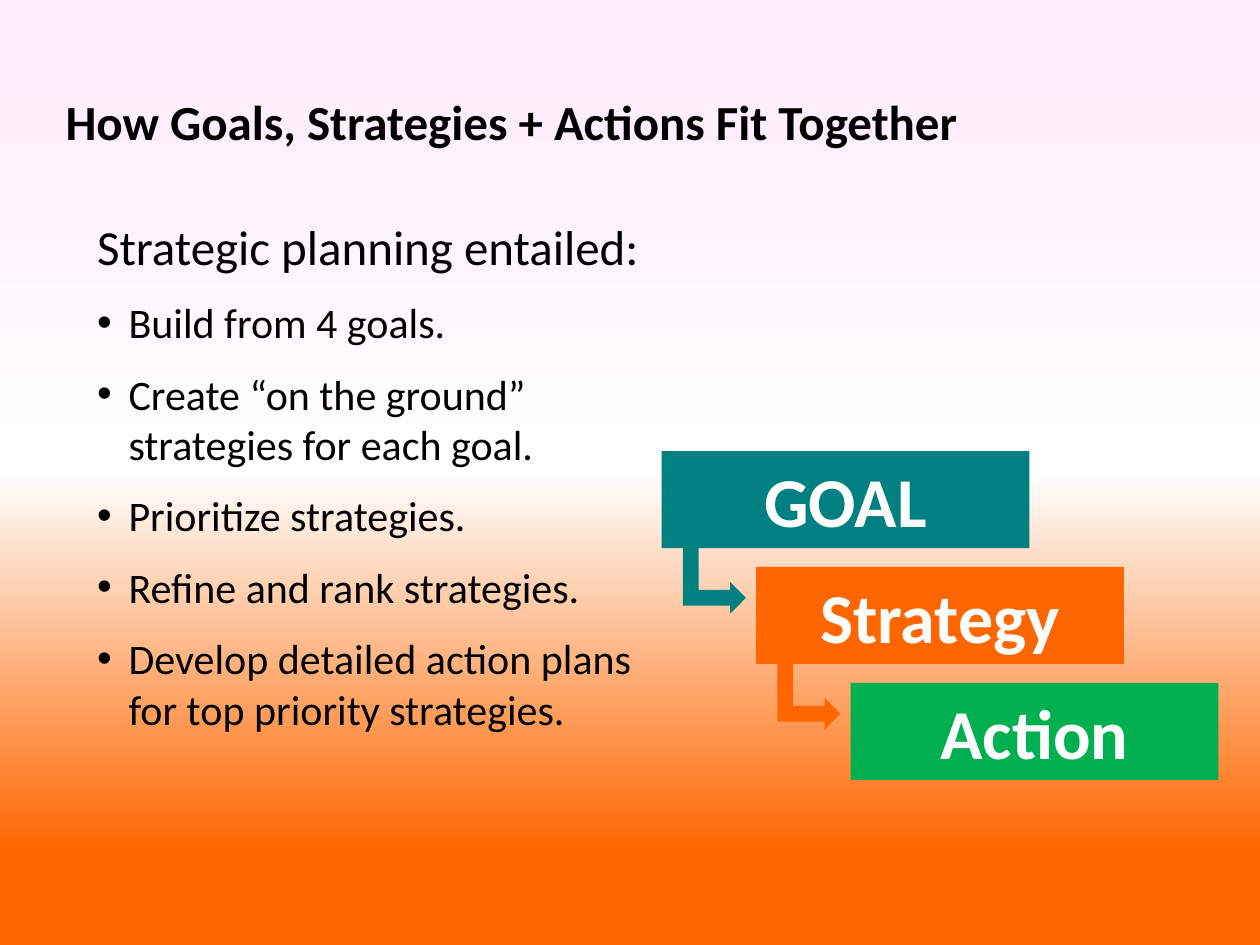
from lxml import etree
from pptx import Presentation
from pptx.dml.color import RGBColor
from pptx.enum.shapes import MSO_SHAPE
from pptx.enum.text import MSO_ANCHOR, MSO_AUTO_SIZE, PP_ALIGN
from pptx.oxml.ns import qn
from pptx.util import Inches, Pt

# Content
TITLE = "How Goals, Strategies + Actions Fit Together"
LEAD = "Strategic planning entailed:"
BULLETS = [
    "Build from 4 goals.",
    "Create “on the ground” strategies for each goal.",
    "Prioritize strategies.",
    "Refine and rank strategies.",
    "Develop detailed action plans for top priority strategies.",
]
STEPS = [("GOAL", "teal"), ("Strategy", "orange"), ("Action", "green")]

FONT = "Calibri"
COLORS = {
    "teal": "008080",
    "orange": "FF6600",
    "green": "00B050",
    "white": "FFFFFF",
    "pink": "FFEBFA",
    "black": "000000",
}
BACKGROUND_STOPS = [(10, "orange"), (50, "white"), (100, "pink")]

# Staircase geometry, in inches
STEP_LEFT, STEP_TOP = 5.25, 3.58
STEP_WIDTH, STEP_HEIGHT = 2.92, 0.77
STEP_RIGHT, STEP_DOWN = 0.75, 0.92
ARROW_WIDTH, ARROW_HEIGHT = 0.54, 0.5
ARROW_INDENT = 0.15


def color(name):
    return RGBColor.from_string(COLORS[name])


def add_text(paragraph, text, size, color_name="black", bold=False):
    run = paragraph.add_run()
    run.text = text
    run.font.name = FONT
    run.font.size = Pt(size)
    run.font.bold = bold
    run.font.color.rgb = color(color_name)


def place(shape, left, top, width, height):
    shape.left, shape.top = Inches(left), Inches(top)
    shape.width, shape.height = Inches(width), Inches(height)
    frame = shape.text_frame
    frame.word_wrap = True
    frame.auto_size = MSO_AUTO_SIZE.NONE
    frame.vertical_anchor = MSO_ANCHOR.TOP
    return frame


def set_bullet(paragraph, character=None):
    properties = paragraph._p.get_or_add_pPr()
    properties.set("marL", str(Inches(0.25)))
    properties.set("indent", str(Inches(-0.25)))
    if character:
        etree.SubElement(properties, qn("a:buFont")).set("typeface", "Arial")
        etree.SubElement(properties, qn("a:buChar")).set("char", character)
    else:
        etree.SubElement(properties, qn("a:buNone"))


def set_background(slide):
    fill = slide.background.fill
    fill.gradient()
    fill.gradient_angle = 90  # counter-clockwise: runs from bottom to top
    stops = slide.background._cSld.find(".//" + qn("a:gsLst"))
    for stop in list(stops):
        stops.remove(stop)
    for position, name in BACKGROUND_STOPS:
        stop = etree.SubElement(stops, qn("a:gs"))
        stop.set("pos", str(position * 1000))
        etree.SubElement(stop, qn("a:srgbClr")).set("val", COLORS[name])


def add_filled_shape(group, kind, left, top, width, height, color_name):
    shape = group.shapes.add_shape(
        kind, Inches(left), Inches(top), Inches(width), Inches(height))
    shape.shadow.inherit = False
    shape.fill.solid()
    shape.fill.fore_color.rgb = color(color_name)
    shape.line.fill.background()
    return shape


def add_staircase(slide):
    group = slide.shapes.add_group_shape()
    for index, (label, color_name) in enumerate(STEPS):
        left = STEP_LEFT + index * STEP_RIGHT
        top = STEP_TOP + index * STEP_DOWN
        box = add_filled_shape(group, MSO_SHAPE.RECTANGLE, left, top,
                               STEP_WIDTH, STEP_HEIGHT, color_name)
        box.text_frame.vertical_anchor = MSO_ANCHOR.TOP
        paragraph = box.text_frame.paragraphs[0]
        paragraph.alignment = PP_ALIGN.CENTER
        add_text(paragraph, label, 40, "white", bold=True)
        # Arrow leading down to the next step
        if index < len(STEPS) - 1:
            arrow = add_filled_shape(
                group, MSO_SHAPE.BENT_UP_ARROW, left + ARROW_INDENT,
                top + STEP_HEIGHT, ARROW_WIDTH, ARROW_HEIGHT, color_name)
            arrow.rotation = 90


def main():
    presentation = Presentation()
    presentation.slide_width = Inches(10)
    presentation.slide_height = Inches(7.5)
    slide = presentation.slides.add_slide(presentation.slide_layouts[1])
    set_background(slide)

    # Title
    title = place(slide.shapes.title, 0.42, 0.68, 9.08, 0.57).paragraphs[0]
    title.alignment = PP_ALIGN.LEFT
    add_text(title, TITLE, 28, bold=True)

    # Lead line and bullets
    body = place(slide.placeholders[1], 0.67, 1.67, 4.67, 5.12)
    for index, text in enumerate([LEAD] + BULLETS):
        paragraph = body.add_paragraph() if index else body.paragraphs[0]
        paragraph.space_before = paragraph.space_after = Pt(6)
        set_bullet(paragraph, "•" if index else None)
        add_text(paragraph, text, 24 if index else 28)

    # Goal, strategy, action
    add_staircase(slide)
    presentation.save("out.pptx")


if __name__ == "__main__":
    main()
